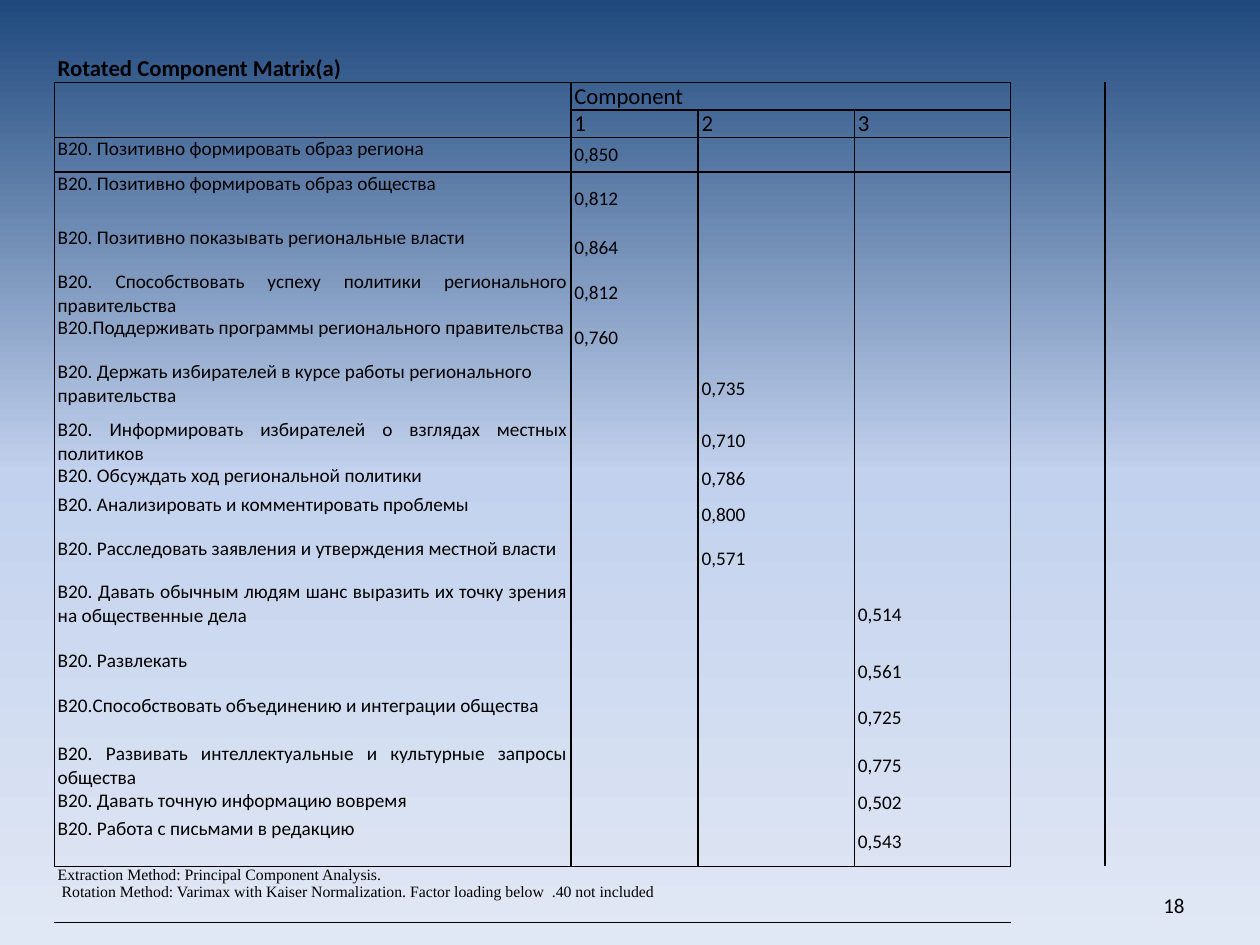
from lxml import etree
from pptx import Presentation
from pptx.dml.color import RGBColor
from pptx.enum.text import MSO_ANCHOR, PP_ALIGN
from pptx.oxml.ns import qn
from pptx.util import Pt

TOP, MID, LOW = MSO_ANCHOR.TOP, MSO_ANCHOR.MIDDLE, MSO_ANCHOR.BOTTOM
LEFT, RIGHT, JUST = PP_ALIGN.LEFT, PP_ALIGN.RIGHT, PP_ALIGN.JUSTIFY
HUES = {"ink": "000000", "top": "1F497D", "mid": "C2D1ED", "low": "E1E8F5"}
PLAIN = "{2D5ABB26-0587-4C30-8999-92F81FD0307C}"
WIDTHS = [295.2, 72.7, 89.3, 89.3, 54, 51.1]
ITEMS = [
    ("В20. Позитивно формировать образ региона", 1, "0,850", 20),
    ("В20. Позитивно формировать образ общества", 1, "0,812", 31),
    ("В20. Позитивно показывать региональные власти", 1, "0,864", 25),
    ("В20. Способствовать успеху политики регионального правительства", 1, "0,812", 26),
    ("В20.Поддерживать программы регионального правительства", 1, "0,760", 25),
    ("В20. Держать избирателей в курсе работы регионального правительства", 2, "0,735", 33),
    ("В20. Информировать избирателей о взглядах местных политиков", 2, "0,710", 26),
    ("В20. Обсуждать ход региональной политики", 2, "0,786", 16.5),
    ("В20. Анализировать и комментировать проблемы", 2, "0,800", 25),
    ("В20. Расследовать заявления и утверждения местной власти", 2, "0,571", 25),
    ("В20. Давать обычным людям шанс выразить их точку зрения на общественные дела", 3, "0,514", 39),
    ("В20. Развлекать", 3, "0,561", 26),
    ("В20.Способствовать объединению и интеграции общества", 3, "0,725", 27.5),
    ("В20. Развивать интеллектуальные и культурные запросы общества", 3, "0,775", 26),
    ("В20. Давать точную информацию вовремя", 3, "0,502", 16.5),
    ("В20. Работа с письмами в редакцию", 3, "0,543", 28),
]
RAGGED = 5
NOTE = ("Extraction Method: Principal Component Analysis.\v Rotation Method: Varimax "
        "with Kaiser Normalization. Factor loading below  .40 not included")


class Deck:
    def __init__(self, wide, high):
        self.file = Presentation()
        self.file.slide_width, self.file.slide_height = Pt(wide), Pt(high)
        self.slide = self.file.slides.add_slide(self.file.slide_layouts[6])
        self.font = "Calibri"

    def shade(self, stops):
        fill = self.slide.background.fill
        fill.gradient()
        fill.gradient_angle = 270
        group = self.slide.element.find(".//" + qn("a:gsLst"))
        for old in list(group):
            group.remove(old)
        for spot, hue in stops:
            stop = etree.SubElement(group, qn("a:gs"), pos=str(spot * 1000))
            etree.SubElement(stop, qn("a:srgbClr"), val=HUES[hue])

    def words(self, frame, text, size, align, font=None, bold=False):
        frame.text = text
        for para in frame.paragraphs:
            para.alignment = align
            for run in para.runs:
                run.font.size, run.font.bold = Pt(size), bold
                run.font.name = font or self.font
                run.font.color.rgb = RGBColor.from_string(HUES["ink"])

    def label(self, x, y, wide, high, text, size):
        frame = self.slide.shapes.add_textbox(Pt(x), Pt(y), Pt(wide), Pt(high)).text_frame
        frame.word_wrap, frame.vertical_anchor = True, LOW
        self.words(frame, text, size, RIGHT)

    def table(self, x, y, widths, heights):
        shape = self.slide.shapes.add_table(len(heights), len(widths), Pt(x), Pt(y),
                                            Pt(sum(widths)), Pt(sum(heights)))
        grid = shape.table
        grid.first_row = grid.horz_banding = False
        shape.element.find(".//" + qn("a:tableStyleId")).text = PLAIN
        for col, wide in zip(grid.columns, widths):
            col.width = Pt(wide)
        for row, high in zip(grid.rows, heights):
            row.height = Pt(high)
        for cell in grid.iter_cells():
            cell.margin_left = cell.margin_right = Pt(2)
            cell.margin_top = cell.margin_bottom = 0
            end = cell.text_frame.paragraphs[0]._p.get_or_add_endParaRPr()
            end.set("sz", "900")
        return grid

    def edge(self, cell, sides):
        props = cell._tc.get_or_add_tcPr()
        for side in sides:
            line = etree.SubElement(props, qn("a:ln" + side), w=str(Pt(1)))
            fill = etree.SubElement(line, qn("a:solidFill"))
            etree.SubElement(fill, qn("a:srgbClr"), val=HUES["ink"])

    def cell(self, cell, text, size, anchor, align=JUST, font=None, bold=False):
        cell.vertical_anchor = anchor
        self.words(cell.text_frame, text, size, align, font, bold)


def main():
    deck = Deck(720, 540)
    deck.shade([(0, "top"), (50, "mid"), (100, "low")])
    deck.label(516.25, 492, 167.75, 36, "18", 12)

    heights = [15, 15, 15] + [item[3] for item in ITEMS] + [32, 11]
    grid = deck.table(31, 31.5, WIDTHS, heights)
    foot = len(ITEMS) + 3
    for row in (0, foot, foot + 1):
        grid.cell(row, 0).merge(grid.cell(row, 3))
    grid.cell(1, 0).merge(grid.cell(2, 0))
    grid.cell(1, 1).merge(grid.cell(1, 3))

    for row in range(1, foot):
        for col in range(4):
            cell = grid.cell(row, col)
            if not cell.is_spanned:
                top = "T" if row <= 3 else ""
                base = "B" if row < 3 or row == foot - 1 else ""
                deck.edge(cell, "LR" + top + base)
        deck.edge(grid.cell(row, 4), "L")
    for col in range(4):
        deck.edge(grid.cell(0, col), "B")
        deck.edge(grid.cell(foot, col), "T")
    for cell in grid.iter_cells():
        cell.fill.background()

    deck.cell(grid.cell(0, 0), "Rotated Component Matrix(a)", 13, MID, bold=True)
    deck.cell(grid.cell(1, 1), "Component", 13, LOW)
    for col in range(1, 4):
        deck.cell(grid.cell(2, col), str(col), 13, LOW)
    for num, (name, col, load, _) in enumerate(ITEMS):
        align = LEFT if num == RAGGED else JUST
        deck.cell(grid.cell(num + 3, 0), name, 11, TOP, align)
        deck.cell(grid.cell(num + 3, col), load, 11, MID)
    deck.cell(grid.cell(foot, 0), NOTE, 9, TOP, LEFT, "Times New Roman")
    deck.file.save("out.pptx")


if __name__ == "__main__":
    main()
